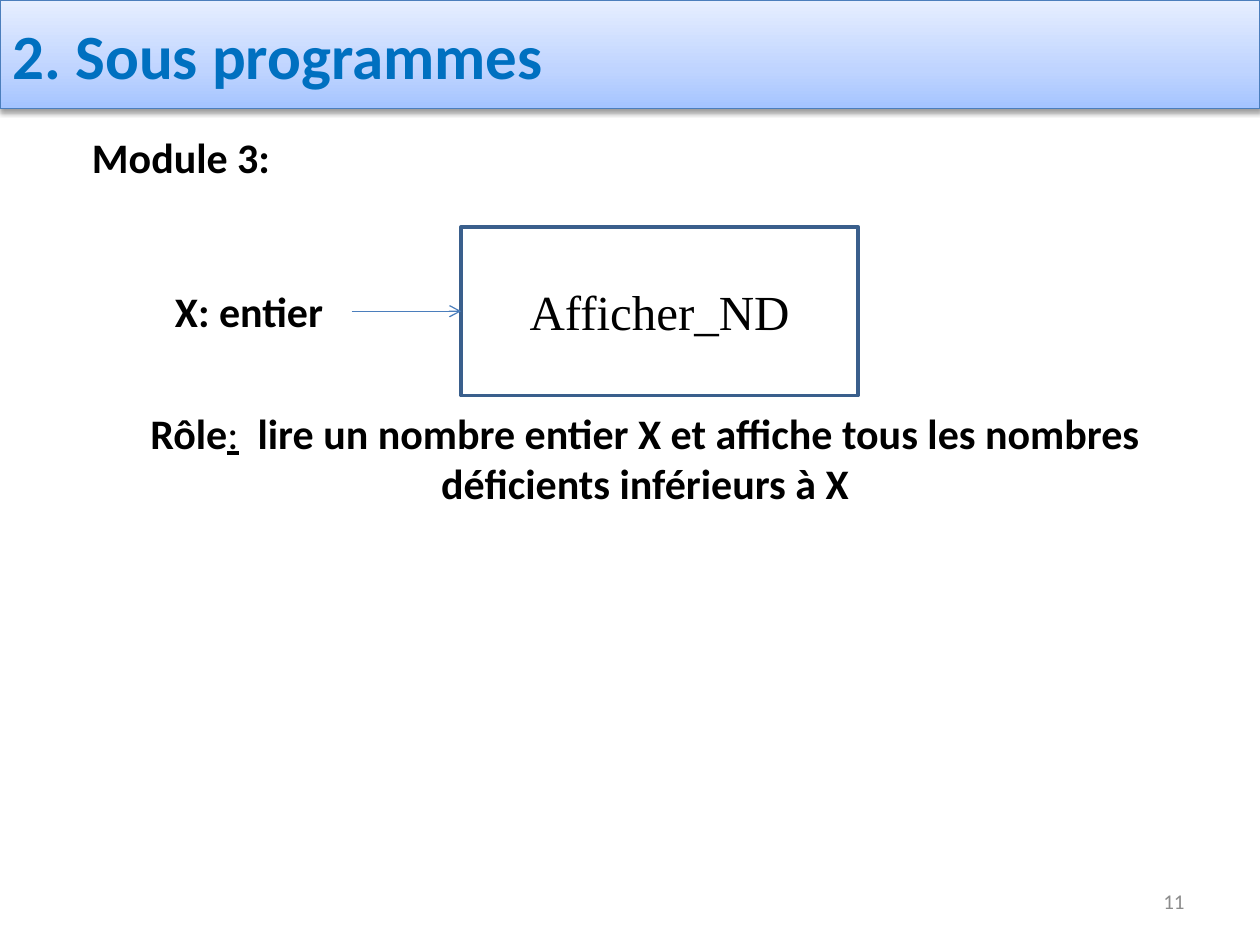
from lxml import etree
from pptx import Presentation
from pptx.dml.color import RGBColor
from pptx.enum.shapes import MSO_CONNECTOR as Connector, MSO_SHAPE as Shape
from pptx.enum.text import MSO_ANCHOR as Anchor, MSO_AUTO_SIZE as AutoSize, PP_ALIGN as Align
from pptx.oxml.ns import qn
from pptx.util import Inches, Pt

# Content: runs are (text, bold, underline)
TITLE = "2. Sous programmes"
MODULE = [("Module 3: ", True, False)]
ROLE = [
    ("Rôle", True, False),
    (":", False, True),
    (" ", False, False),
    (" lire un nombre entier X et affiche tous les nombres déficients inférieurs à X", True, False),
]
INPUT = "X: entier"
PROCEDURE = "Afficher_ND"
PAGE_NUMBER = "11"

COLORS = {"title": "0070C0", "text": "000000", "number": "8C8C8C",
          "accent": "4B7EBC", "frame": "3A5F8C", "shadow": "000000"}
BANNER_STOPS = [(0, "A4C4FF"), (35, "BFD4FF"), (100, "E6EEFF")]
WIDTH, HEIGHT = 10, 7.5
BANNER_HEIGHT = 0.86
FRAME = (3.66, 1.8, 3.15, 1.34)
ARROW_LENGTH = 0.87
DIAGRAM_GAP = 123  # points kept free for the diagram between the paragraphs


def color(name):
    return RGBColor.from_string(COLORS[name])


def place(shape, left, top, width, height):
    shape.left, shape.top = Inches(left), Inches(top)
    shape.width, shape.height = Inches(width), Inches(height)


def add_span(para, text, size, tint="text", bold=False, underline=False, font="Calibri"):
    span = para.add_run()
    span.text = text
    span.font.name, span.font.size = font, Pt(size)
    span.font.bold, span.font.underline = bold, underline
    span.font.color.rgb = color(tint)


def set_frame(shape, anchor, align, wrap=True):
    frame = shape.text_frame
    frame.auto_size = AutoSize.NONE
    frame.word_wrap, frame.vertical_anchor = wrap, anchor
    frame.paragraphs[0].alignment = align
    return frame


def set_line(shape, tint, width):
    shape.line.color.rgb = color(tint)
    shape.line.width = Pt(width)


def add_effects(shape):
    return etree.SubElement(shape._element.spPr, qn("a:effectLst"))


def add_color(parent, value):
    return etree.SubElement(parent, qn("a:srgbClr"), val=value)


deck = Presentation()
deck.slide_width, deck.slide_height = Inches(WIDTH), Inches(HEIGHT)
page = deck.slides.add_slide(deck.slide_layouts[1])

# Title banner with gradient and shadow
banner = page.shapes.title
place(banner, 0, 0, WIDTH, BANNER_HEIGHT)
banner.fill.gradient()
banner.fill.gradient_angle = 90
stops = banner._element.spPr.find(qn("a:gradFill")).find(qn("a:gsLst"))
for stop in list(stops):
    stops.remove(stop)
for share, value in BANNER_STOPS:
    add_color(etree.SubElement(stops, qn("a:gs"), pos=str(share * 1000)), value)
set_line(banner, "accent", 0.75)
shadow = etree.SubElement(add_effects(banner), qn("a:outerShdw"), blurRad=str(Pt(3.1)),
                          dist=str(Pt(1.6)), dir=str(90 * 60000), rotWithShape="0")
etree.SubElement(add_color(shadow, COLORS["shadow"]), qn("a:alpha"), val="38000")
add_span(set_frame(banner, Anchor.MIDDLE, Align.LEFT).paragraphs[0], TITLE, 36, "title", True)

# Module heading and role, above and below the diagram
body = page.placeholders[1]
place(body, 0.23, 0.99, 9.38, 6.09)
frame = set_frame(body, Anchor.TOP, Align.JUSTIFY)
frame.add_paragraph().alignment = Align.CENTER
for para, spans, gap in zip(frame.paragraphs, (MODULE, ROLE), (0, DIAGRAM_GAP)):
    props = para._p.get_or_add_pPr()
    props.set("marL", str(Inches(0.4)))
    props.set("indent", "0")
    etree.SubElement(props, qn("a:buNone"))
    para.space_before, para.space_after = Pt(gap), Pt(6)
    for text, bold, underline in spans:
        add_span(para, text, 24, bold=bold, underline=underline)

# Procedure box
box = page.shapes.add_shape(Shape.RECTANGLE, *map(Inches, FRAME))
box.shadow.inherit = False
box.fill.background()
set_line(box, "frame", 2)
para = set_frame(box, Anchor.MIDDLE, Align.CENTER).paragraphs[0]
add_span(para, PROCEDURE, 28, font="Times New Roman")

# Input arrow, meeting the middle of the box's left side
left, top, _, height = FRAME
middle = top + height / 2
arrow = page.shapes.add_connector(Connector.STRAIGHT, Inches(left - ARROW_LENGTH),
                                  Inches(middle), Inches(left), Inches(middle))
set_line(arrow, "accent", 0.75)
etree.SubElement(arrow.line._get_or_add_ln(), qn("a:tailEnd"), type="arrow")
add_effects(arrow)

# Input label and page number
label = page.shapes.add_textbox(*map(Inches, (1.29, middle - 0.25, 1.43, 0.5)))
add_span(set_frame(label, Anchor.TOP, Align.LEFT, False).paragraphs[0], INPUT, 24, bold=True)
number = page.shapes.add_textbox(*map(Inches, (7.17, 6.95, 2.33, 0.4)))
add_span(set_frame(number, Anchor.MIDDLE, Align.RIGHT).paragraphs[0], PAGE_NUMBER, 12, "number")

deck.save("out.pptx")
